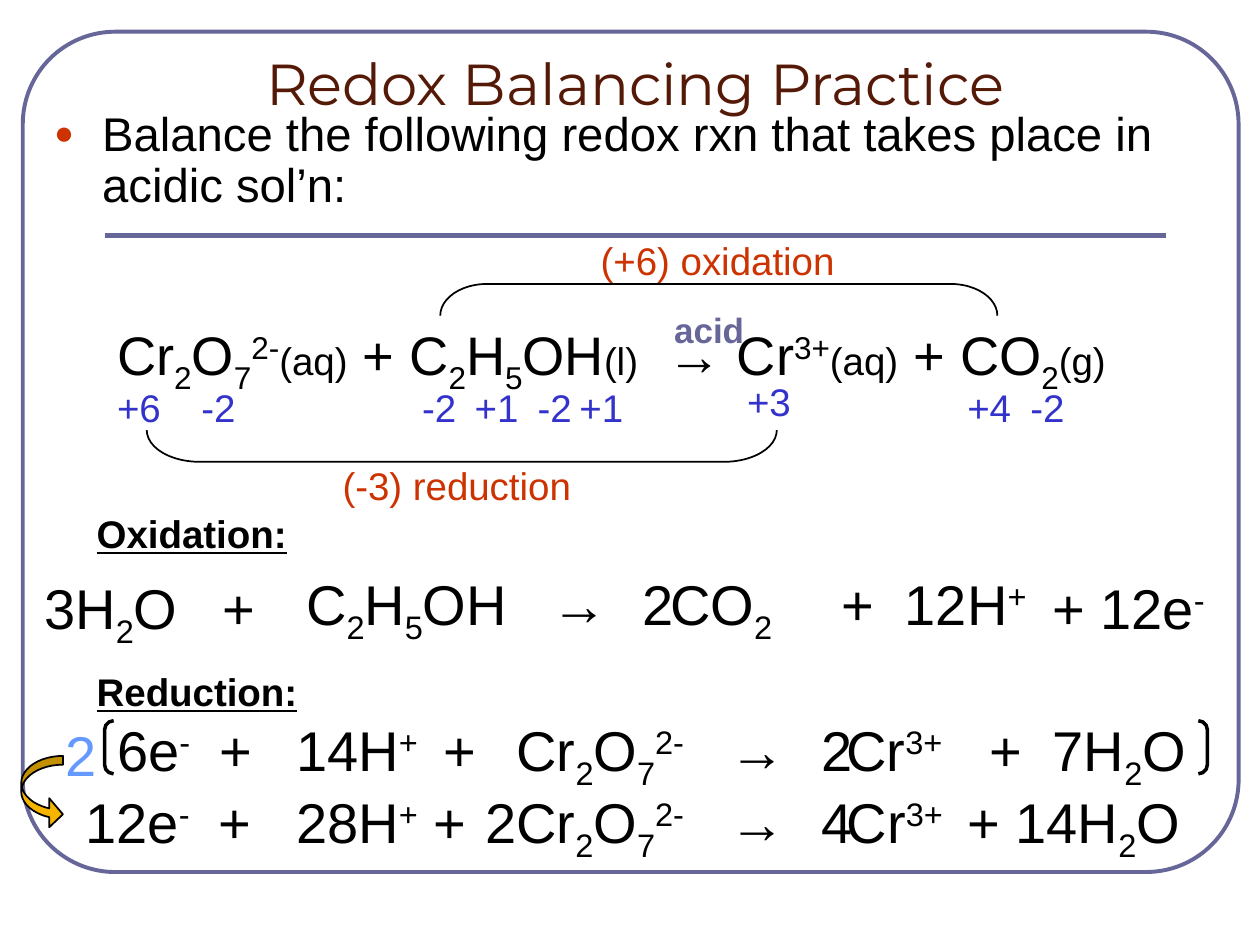
from lxml import etree
from pptx import Presentation
from pptx.dml.color import RGBColor
from pptx.enum.shapes import MSO_CONNECTOR, MSO_SHAPE
from pptx.enum.text import MSO_AUTO_SIZE, PP_ALIGN
from pptx.oxml.ns import qn
from pptx.util import Cm, Pt

LEFT, CENTER = PP_ALIGN.LEFT, PP_ALIGN.CENTER
BLACK = RGBColor(0x00, 0x00, 0x00)
SLATE = RGBColor(0x66, 0x66, 0x99)
BROWN = RGBColor(0x55, 0x1A, 0x07)
RED = RGBColor(0xCC, 0x33, 0x00)
BLUE = RGBColor(0x33, 0x33, 0xCC)
LIGHT_BLUE = RGBColor(0x66, 0x99, 0xFF)
GOLD = RGBColor(0xF4, 0xB4, 0x00)

# In formulas "|" parts the spans: "_" starts a subscript, "^" a superscript,
# "~" a small state symbol.
BASELINES = {"_": "-25000", "^": "30000"}
STATE_SIZE = 22

TITLE = "Redox Balancing Practice"
TASK = "Balance the following redox rxn that takes place in acidic sol’n:"
EQUATION = ("Cr|_2|O|_7|^2-|~(aq)| + C|_2|H|_5|OH|~(l)|\t→ Cr|^3+|~(aq)"
            "| + CO|_2|~(g)")

# (text, left, top)
OXIDATION_NUMBERS = [
    ("+6", 2.11, 7.62), ("-2", 3.81, 7.62), ("-2", 8.26, 7.62),
    ("+1", 9.32, 7.62), ("-2", 10.59, 7.62), ("+1", 11.43, 7.62),
    ("+3", 14.81, 7.49), ("+4", 19.25, 7.62), ("-2", 20.52, 7.62),
]
HEADINGS = [("Oxidation:", 1.7, 10.16), ("Reduction:", 1.7, 13.34)]

OXIDATION_TOP, REDUCTION_TOP, DOUBLED_TOP = 11.35, 14.3, 15.75
# (formula, left, top, width, tab stops)
HALF_REACTIONS = [
    ("C|_2|H|_5|OH\t→\tCO|_2", 5.92, OXIDATION_TOP, 12.9, (4.95, 7.34)),
    ("2", 12.7, OXIDATION_TOP, 1.27, ()),
    ("3H|_2|O\t+", 0.64, OXIDATION_TOP + 0.08, 5.08, (3.6,)),
    ("+\t12H|^+", 16.71, OXIDATION_TOP, 4.45, (1.28,)),
    ("+ 12e|^-", 20.96, OXIDATION_TOP + 0.08, 3.81, ()),
    ("Cr|_2|O|_7|^2-|\t→\tCr|^3+", 10.16, REDUCTION_TOP, 12.9, (4.29, 6.65)),
    ("2", 16.31, REDUCTION_TOP, 1.27, ()),
    ("+\t7H|_2|O", 19.69, REDUCTION_TOP, 5.08, (1.28,)),
    ("14H|^+|\t+", 5.72, REDUCTION_TOP, 4.45, (2.97,)),
    ("6e|^-|\t+", 2.11, REDUCTION_TOP, 4.65, (2.06,)),
    ("2Cr|_2|O|_7|^2-|\t→\tCr|^3+", 9.53, DOUBLED_TOP, 12.9, (4.93, 7.29)),
    ("4", 16.31, DOUBLED_TOP, 1.27, ()),
    ("+ 14H|_2|O", 19.25, DOUBLED_TOP, 5.08, ()),
    ("28H|^+|\t+", 5.72, DOUBLED_TOP, 4.45, (2.77,)),
    ("12e|^-|\t+", 1.47, DOUBLED_TOP, 4.65, (2.69,)),
]


def add_text(page, text, left, top, width, height=None, *, size=22, font="Arial",
             color=BLACK, bold=False, underline=False, align=LEFT, tabs=()):
    """Add a text box with one paragraph; without a height it fits one line."""
    box = page.shapes.add_textbox(Cm(left), Cm(top), Cm(width),
                                  Cm(height or 0.26 + 0.042 * size))
    box.text_frame.word_wrap = True
    if height is None:
        box.text_frame.auto_size = MSO_AUTO_SIZE.SHAPE_TO_FIT_TEXT
    para = box.text_frame.paragraphs[0]
    para.alignment = align
    if tabs:
        stops = etree.SubElement(para._p.get_or_add_pPr(), qn("a:tabLst"))
        for stop in tabs:
            etree.SubElement(stops, qn("a:tab"), pos=str(Cm(stop)), algn="l")
    for part in text.split("|"):
        mark = part[0] if part[0] in "_^~" else ""
        span = para.add_run()
        span.text = part[len(mark):]
        span.font.name = font
        span.font.size = Pt(STATE_SIZE if mark == "~" else size)
        span.font.bold = bold
        span.font.underline = underline
        span.font.color.rgb = color
        if mark in BASELINES:
            span._r.get_or_add_rPr().set("baseline", BASELINES[mark])
    return para


def add_bullet(para, color, indent):
    para.line_spacing = 0.9
    properties = para._p.get_or_add_pPr()
    properties.set("marL", str(Cm(indent)))
    properties.set("indent", str(-Cm(indent)))
    holder = etree.SubElement(properties, qn("a:buClr"))
    etree.SubElement(holder, qn("a:srgbClr"), val=str(color))
    etree.SubElement(properties, qn("a:buSzPct"), val="70000")
    etree.SubElement(properties, qn("a:buFont"), typeface="Arial")
    etree.SubElement(properties, qn("a:buChar"), char="●")


def add_outline(page, kind, left, top, width, height, adjustments, *,
                color=BLACK, weight=1, fill=None, rotation=0):
    shape = page.shapes.add_shape(kind, Cm(left), Cm(top), Cm(width), Cm(height))
    shape.shadow.inherit = False
    shape.rotation = rotation
    for index, value in enumerate(adjustments):
        shape.adjustments[index] = value
    shape.line.color.rgb = color
    shape.line.width = Pt(weight)
    if fill is None:
        shape.fill.background()
    else:
        shape.fill.solid()
        shape.fill.fore_color.rgb = fill


def add_rule(page, left, right, top):
    rule = page.shapes.add_connector(MSO_CONNECTOR.STRAIGHT, Cm(left), Cm(top),
                                     Cm(right), Cm(top))
    rule.line.color.rgb = SLATE
    rule.line.width = Pt(3)
    etree.SubElement(rule._element.spPr, qn("a:effectLst"))


def main():
    deck = Presentation()
    deck.slide_width, deck.slide_height = Cm(25.4), Cm(19.05)
    page = deck.slides.add_slide(deck.slide_layouts[6])

    add_outline(page, MSO_SHAPE.ROUNDED_RECTANGLE, 0.46, 0.64, 24.51, 16.94,
                [0.11], color=SLATE, weight=2.25)
    add_rule(page, 2.11, 23.5, 4.75)
    add_text(page, TITLE, 2.11, 0.84, 21.39, size=33, font="Montserrat",
             color=BROWN, align=CENTER)
    task = add_text(page, TASK, 0.84, 2.11, 23.7, 2.34, size=27)
    add_bullet(task, RED, 0.97)

    add_text(page, EQUATION, 2.11, 6.35, 22.86, 2.54, size=31, tabs=(11.1,))
    for number, left, top in OXIDATION_NUMBERS:
        add_text(page, number, left, top, 1.47, color=BLUE)
    add_outline(page, MSO_SHAPE.LEFT_BRACKET, 14.17, 0.43, 0.64, 11.23, [1.47],
                rotation=90)
    add_text(page, "(+6) oxidation", 11.86, 4.65, 6.2, color=RED)
    add_text(page, "(-3) reduction", 3.61, 9.19, 11.2, color=RED, align=CENTER)
    add_outline(page, MSO_SHAPE.LEFT_BRACKET, 8.99, 2.64, 0.64, 12.7, [1.67],
                rotation=270)
    add_text(page, "acid", 13.34, 6.1, 2.54, size=20, color=SLATE, bold=True)

    for heading, left, top in HEADINGS:
        add_text(page, heading, left, top, 4.88, bold=True, underline=True)
    for formula, left, top, width, tabs in HALF_REACTIONS:
        add_text(page, formula, left, top, width, size=32, tabs=tabs)

    add_outline(page, MSO_SHAPE.DOUBLE_BRACKET, 2.11, 14.53, 22.23, 1.07, [0.17],
                weight=2)
    add_text(page, "2", 1.07, 14.4, 1.27, size=32, color=LIGHT_BLUE)
    add_outline(page, MSO_SHAPE.CURVED_RIGHT_ARROW, 0.43, 15.24, 0.84, 1.47,
                [0.21, 0.7, 0.33], fill=GOLD)

    deck.save("out.pptx")


if __name__ == "__main__":
    main()
